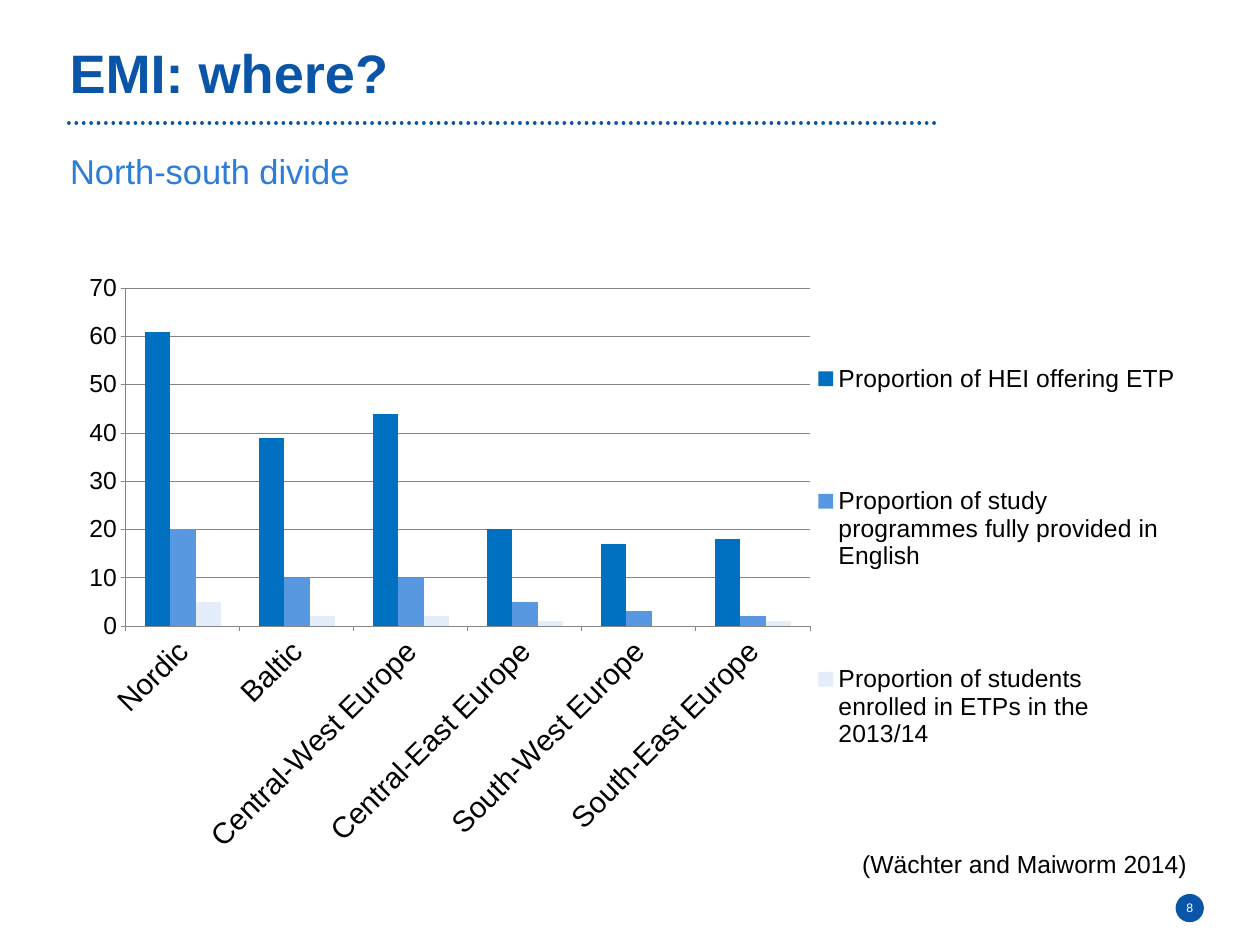
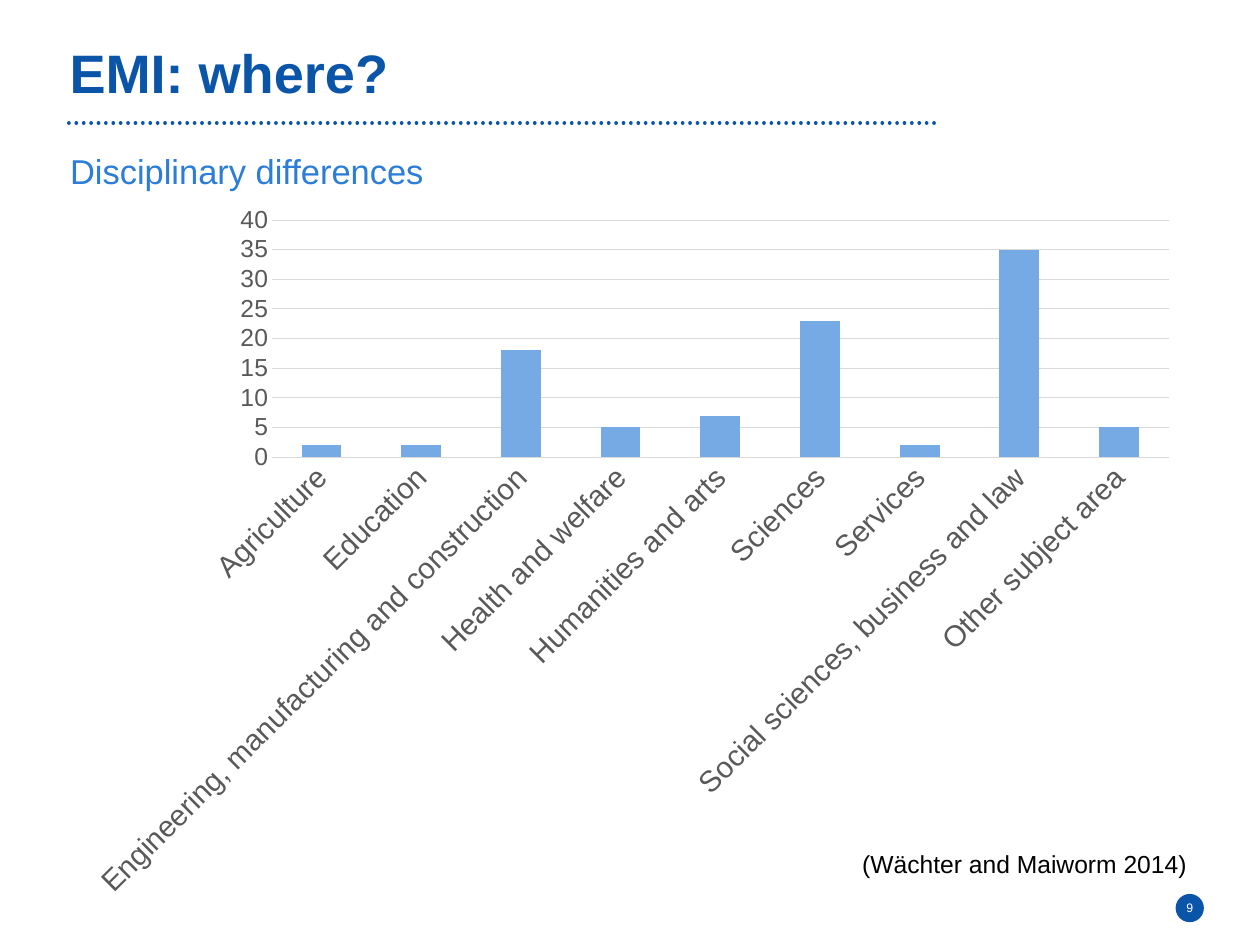
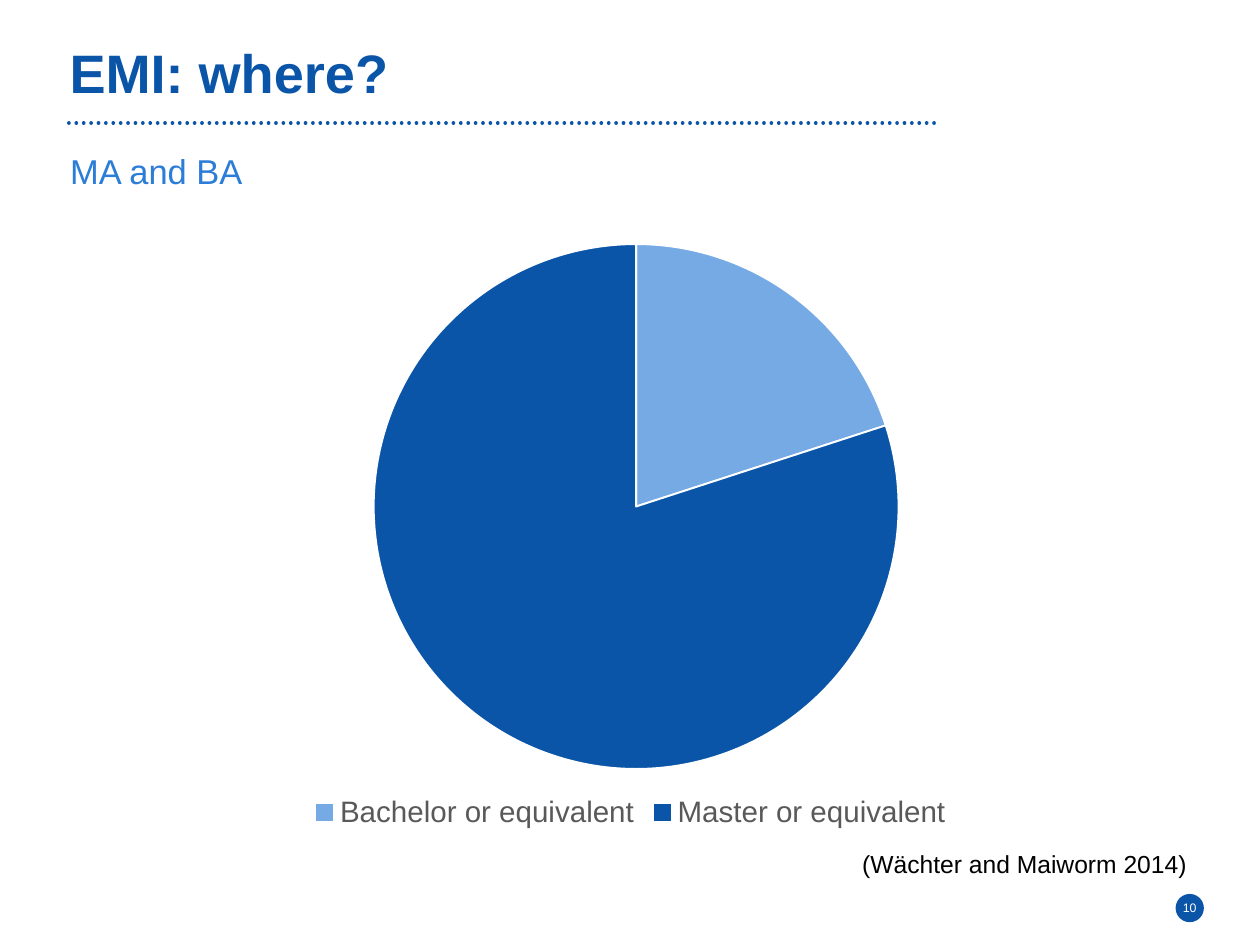
"""Build three chart slides on where English-medium instruction is offered."""
from lxml.etree import SubElement
from pptx import Presentation
from pptx.chart.data import CategoryChartData
from pptx.dml.color import RGBColor
from pptx.enum.chart import XL_CHART_TYPE, XL_LEGEND_POSITION, XL_TICK_MARK
from pptx.enum.dml import MSO_LINE
from pptx.enum.shapes import MSO_CONNECTOR, MSO_SHAPE
from pptx.enum.text import MSO_ANCHOR, MSO_AUTO_SIZE, PP_ALIGN
from pptx.oxml.ns import qn
from pptx.util import Pt

NAVY = RGBColor(0x0B, 0x55, 0xA8)
BLUE = RGBColor(0x2C, 0x7D, 0xD7)
SKY = RGBColor(0x75, 0xAA, 0xE5)
AZURE = RGBColor(0x00, 0x70, 0xC0)
MID = RGBColor(0x58, 0x98, 0xE0)
PALE = RGBColor(0xE3, 0xEE, 0xFA)
WHITE = RGBColor(0xFF, 0xFF, 0xFF)
BLACK = RGBColor(0x00, 0x00, 0x00)
DARK = RGBColor(0x59, 0x59, 0x59)
GRAY = RGBColor(0x86, 0x86, 0x86)
LIGHT = RGBColor(0xD9, 0xD9, 0xD9)
FONT = "Arial"


def write(shape, text, size, color, bold=False, align=PP_ALIGN.LEFT,
          anchor=MSO_ANCHOR.TOP, line=None):
    frame = shape.text_frame
    frame.auto_size = MSO_AUTO_SIZE.NONE
    frame.word_wrap = True
    frame.vertical_anchor = anchor
    frame.margin_left = frame.margin_right = 0
    frame.margin_top = frame.margin_bottom = 0
    para = frame.paragraphs[0]
    para.alignment = align
    para.space_before = Pt(0)
    if line:
        para.line_spacing = Pt(line)
    run = para.add_run()
    run.text = text
    font = run.font
    font.name, font.size, font.bold = FONT, Pt(size), bold
    font.color.rgb = color


def place(node, index, box, inner=False):
    for old in node.findall(qn("c:layout")):
        node.remove(old)
    layout = node.makeelement(qn("c:layout"))
    node.insert(index, layout)
    manual = SubElement(layout, qn("c:manualLayout"))
    if inner:
        SubElement(manual, qn("c:layoutTarget")).set("val", "inner")
    for key in ("xMode", "yMode"):
        SubElement(manual, qn("c:" + key)).set("val", "edge")
    for key, part in zip("xywh", box):
        SubElement(manual, qn("c:" + key)).set("val", str(part))


COLUMN, PIE = XL_CHART_TYPE.COLUMN_CLUSTERED, XL_CHART_TYPE.PIE
RIGHT, BOTTOM = XL_LEGEND_POSITION.RIGHT, XL_LEGEND_POSITION.BOTTOM

pages = [
    dict(head="North-south divide", kind=COLUMN, top=214.6, high=490.3,
         plot=(0.05, 0.04, 0.61, 0.56), ink=BLACK, rule=GRAY, peak=70, step=10,
         tick=XL_TICK_MARK.OUTSIDE, edge=True,
         legend=(RIGHT, 20), colors=[AZURE, MID, PALE],
         cats=["Nordic", "Baltic", "Central-West Europe", "Central-East Europe",
               "South-West Europe", "South-East Europe"],
         rows=[("Proportion of HEI offering ETP", (61, 39, 44, 20, 17, 18)),
               ("Proportion of study programmes fully provided in English",
                (20, 10, 10, 5, 3, 2)),
               ("Proportion of students enrolled in ETPs in the 2013/14",
                (5, 2, 2, 1, 0, 1))]),
    dict(head="Disciplinary differences", kind=COLUMN, top=155.5, high=584,
         plot=(0.18, 0.04, 0.8, 0.33), ink=DARK, rule=LIGHT, peak=40, step=5,
         tick=XL_TICK_MARK.NONE, edge=False,
         legend=None, colors=[SKY],
         cats=["Agriculture", "Education",
               "Engineering, manufacturing and construction",
               "Health and welfare", "Humanities and arts", "Sciences",
               "Services", "Social sciences, business and law",
               "Other subject area"],
         rows=[("Series 1", (2, 2, 18, 5, 7, 23, 2, 35, 5))]),
    dict(head="MA and BA", kind=PIE, top=188.6, high=490.3,
         plot=(0.27, 0.02, 0.47, 0.87), ink=DARK,
         legend=(BOTTOM, 24), colors=[SKY, NAVY],
         cats=["Bachelor or equivalent", "Master or equivalent"],
         rows=[("Series 1", (20, 80))]),
]

deck = Presentation()
deck.slide_width, deck.slide_height = Pt(1024), Pt(768)

for number, page in enumerate(pages, 8):
    slide = deck.slides.add_slide(deck.slide_layouts[0])
    shapes = slide.shapes

    title, sub = slide.placeholders
    title.left, title.top, title.width, title.height = Pt(56.5), Pt(33), Pt(749), Pt(65)
    write(title, "EMI: where?", 44, NAVY, bold=True, line=52)
    sub.left, sub.top, sub.width, sub.height = Pt(57), Pt(121.7), Pt(749), Pt(34)
    write(sub, page["head"], 28, BLUE)

    dots = shapes.add_connector(MSO_CONNECTOR.STRAIGHT, Pt(56), Pt(100), Pt(765), Pt(100))
    dots.line.color.rgb = NAVY
    dots.line.width = Pt(3)
    dots.line.dash_style = MSO_LINE.ROUND_DOT
    dots.line._get_or_add_ln().set("cap", "rnd")
    SubElement(dots._element.spPr, qn("a:effectLst"))

    badge = shapes.add_shape(MSO_SHAPE.OVAL, Pt(955.4), Pt(726.5), Pt(23), Pt(23))
    badge.shadow.inherit = False
    badge.fill.solid()
    badge.fill.fore_color.rgb = NAVY
    badge.line.fill.background()
    write(badge, str(number), 10, WHITE, align=PP_ALIGN.CENTER, anchor=MSO_ANCHOR.MIDDLE)

    source = shapes.add_textbox(Pt(664.6), Pt(690), Pt(300), Pt(26))
    write(source, "(Wächter and Maiworm 2014)", 20, BLACK, align=PP_ALIGN.RIGHT)

    data = CategoryChartData()
    data.categories = page["cats"]
    for name, values in page["rows"]:
        data.add_series(name, values)
    chart = shapes.add_chart(page["kind"], Pt(56.7), Pt(page["top"]), Pt(911.5),
                             Pt(page["high"]), data).chart
    chart.has_title = False
    chart.font.name, chart.font.size = FONT, Pt(20)
    chart.font.color.rgb = page["ink"]
    place(chart._chartSpace.chart.plotArea, 0, page["plot"], inner=True)

    chart.has_legend = page["legend"] is not None
    if chart.has_legend:
        side, size = page["legend"]
        legend = chart.legend
        legend.position = side
        legend.include_in_layout = False
        legend.font.name, legend.font.size = FONT, Pt(size)
        legend.font.color.rgb = page["ink"]
        if side == RIGHT:
            place(legend._element, 1, (0.68, 0.01, 0.32, 0.95))

    plot = chart.plots[0]
    if page["kind"] == PIE:
        for index, color in enumerate(page["colors"]):
            format = plot.series[0].points[index].format
            format.fill.solid()
            format.fill.fore_color.rgb = color
            format.line.color.rgb = WHITE
            format.line.width = Pt(1.5)
        continue

    plot.vary_by_categories = False
    plot.gap_width, plot.overlap = 150, 0
    for series, color in zip(plot.series, page["colors"]):
        series.format.fill.solid()
        series.format.fill.fore_color.rgb = color
        series.invert_if_negative = False

    across, up = chart.category_axis, chart.value_axis
    for axis, size in ((across, 24), (up, 20)):
        axis.major_tick_mark = page["tick"]
        axis.minor_tick_mark = XL_TICK_MARK.NONE
        font = axis.tick_labels.font
        font.name, font.size = FONT, Pt(size)
        font.color.rgb = page["ink"]
        if page["edge"]:
            axis.format.line.color.rgb = page["rule"]
            axis.format.line.width = Pt(0.75)
        else:
            axis.format.line.fill.background()
    across._element.find(qn("c:txPr")).find(qn("a:bodyPr")).set("rot", "-2700000")
    up.minimum_scale, up.maximum_scale = 0, page["peak"]
    up.major_unit = page["step"]
    up.has_major_gridlines = True
    up.major_gridlines.format.line.color.rgb = page["rule"]
    up.major_gridlines.format.line.width = Pt(0.75)

deck.save("out.pptx")
